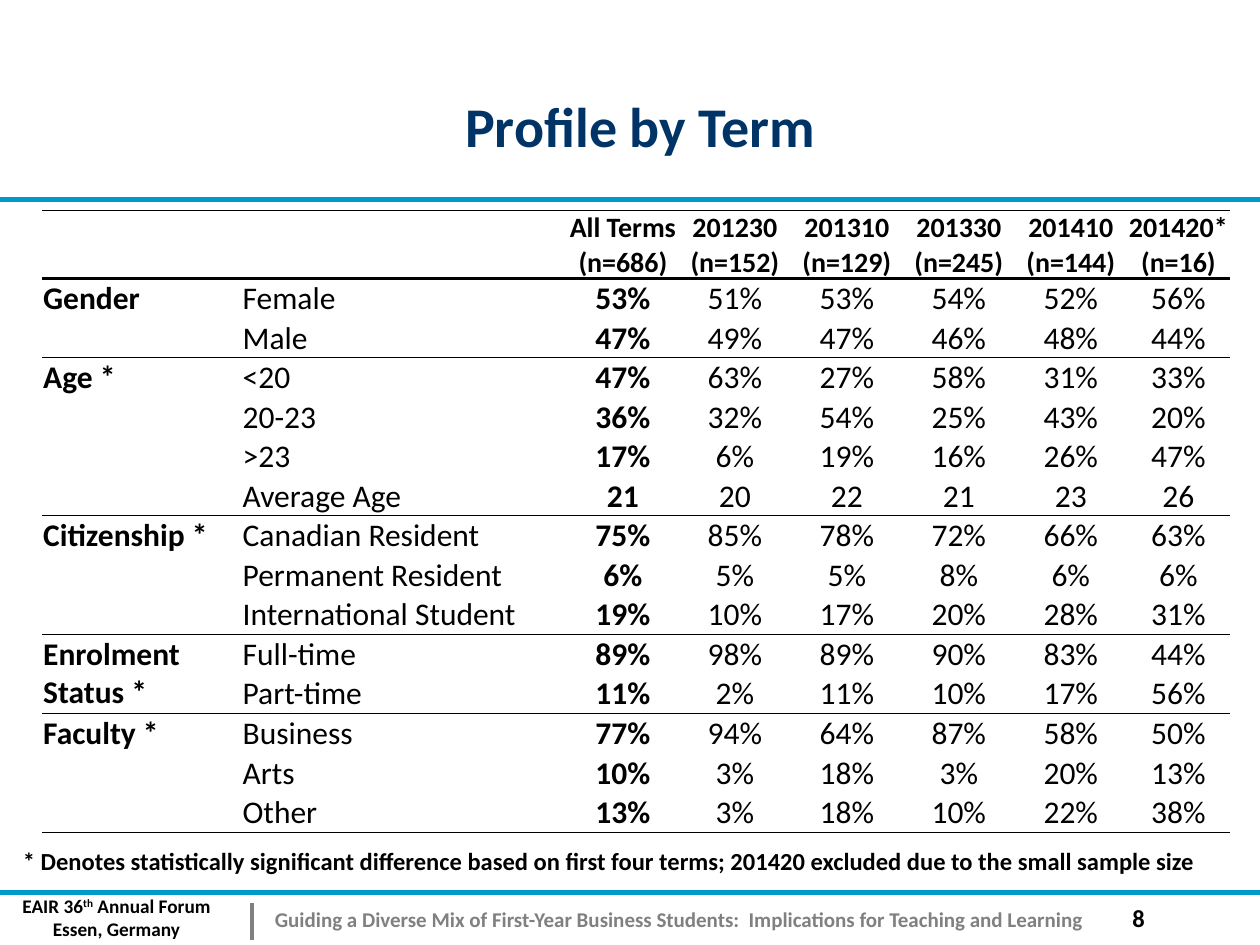
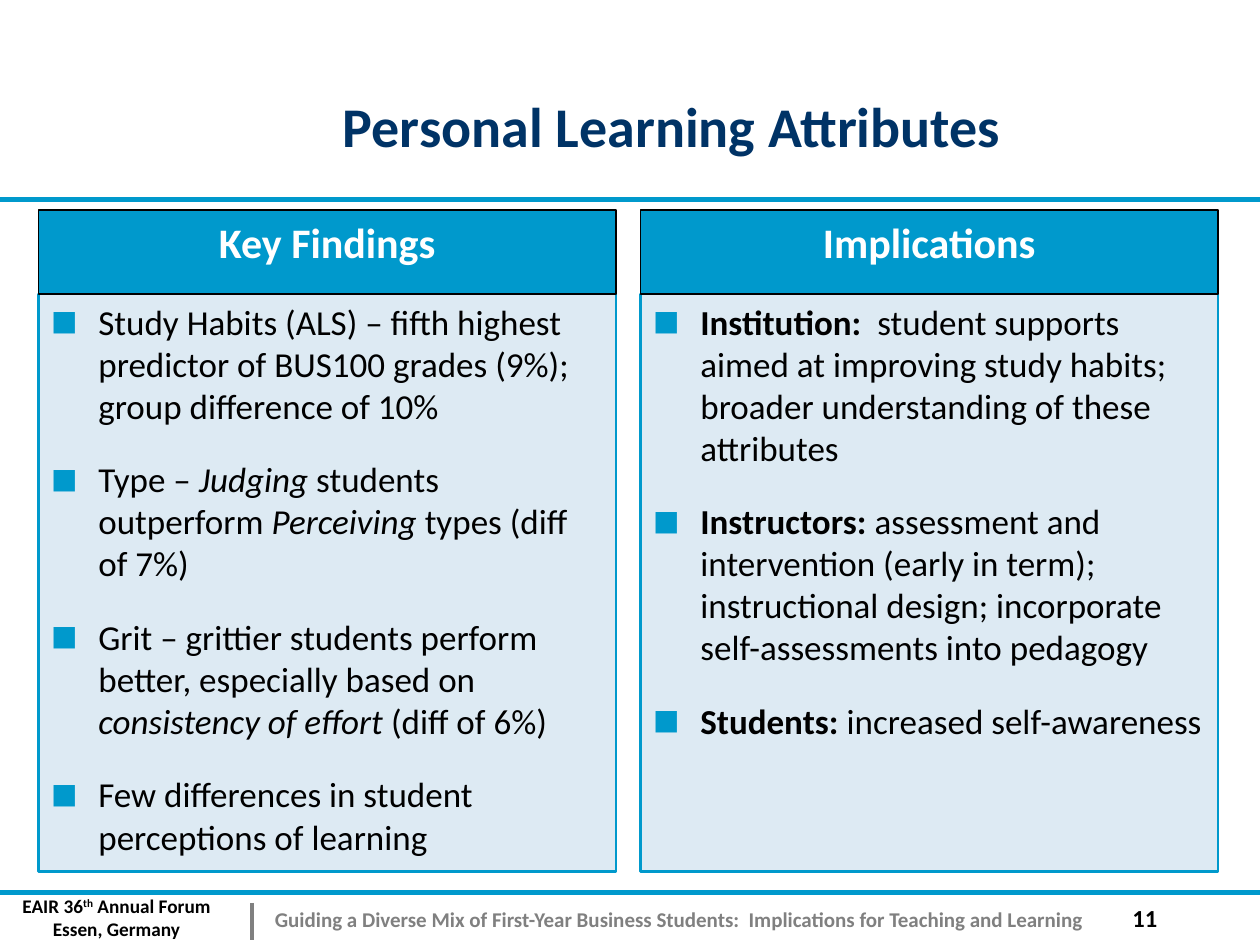
"""Build two slides on first-year business students: a profile table and findings with implications."""
from lxml import etree
from pptx import Presentation
from pptx.dml.color import RGBColor
from pptx.enum.shapes import MSO_CONNECTOR, MSO_SHAPE
from pptx.enum.text import MSO_ANCHOR, MSO_AUTO_SIZE, PP_ALIGN
from pptx.oxml.ns import qn
from pptx.util import Pt

CENTER = PP_ALIGN.CENTER
LEFT = PP_ALIGN.LEFT
TOP = MSO_ANCHOR.TOP
BOTTOM = MSO_ANCHOR.BOTTOM
NO_AUTOFIT = MSO_AUTO_SIZE.NONE
STRAIGHT = MSO_CONNECTOR.STRAIGHT
PROCESS = MSO_SHAPE.FLOWCHART_PROCESS

FONT = "Calibri"
BLACK = "000000"
WHITE = "FFFFFF"
NAVY = "003366"
BLUE = "0099CC"
PALE_BLUE = "DDEAF3"
GRAY = "808080"

SLIDE_WIDTH = 720
SLIDE_HEIGHT = 540
TITLE_ONLY = 5
TWO_CONTENT = 3

PROFILE_HEADINGS = [
    ("All Terms", "(n=686)"), ("201230", "(n=152)"), ("201310", "(n=129)"),
    ("201330", "(n=245)"), ("201410", "(n=144)"), ("201420*", "(n=16)"),
]
PROFILE_GROUPS = [
    ("Gender", [
        ("Female", "53%", "51%", "53%", "54%", "52%", "56%"),
        ("Male", "47%", "49%", "47%", "46%", "48%", "44%"),
    ]),
    ("Age *", [
        ("<20", "47%", "63%", "27%", "58%", "31%", "33%"),
        ("20-23", "36%", "32%", "54%", "25%", "43%", "20%"),
        (">23", "17%", "6%", "19%", "16%", "26%", "47%"),
        ("Average Age", "21", "20", "22", "21", "23", "26"),
    ]),
    ("Citizenship *", [
        ("Canadian Resident", "75%", "85%", "78%", "72%", "66%", "63%"),
        ("Permanent Resident", "6%", "5%", "5%", "8%", "6%", "6%"),
        ("International Student", "19%", "10%", "17%", "20%", "28%", "31%"),
    ]),
    ("Enrolment Status *", [
        ("Full-time", "89%", "98%", "89%", "90%", "83%", "44%"),
        ("Part-time", "11%", "2%", "11%", "10%", "17%", "56%"),
    ]),
    ("Faculty *", [
        ("Business", "77%", "94%", "64%", "87%", "58%", "50%"),
        ("Arts", "10%", "3%", "18%", "3%", "20%", "13%"),
        ("Other", "13%", "3%", "18%", "10%", "22%", "38%"),
    ]),
]
COLUMN_WIDTHS = [114, 186] + [64] * 5 + [59]
HEADING_HEIGHT = 39
ROW_HEIGHT = 22.6
THIN_RULE = 0.5
THICK_RULE = 2

KEY_FINDINGS = [
    [("Study Habits (ALS) – fifth highest predictor of BUS100 grades (9%); "
      "group difference of 10%", {})],
    [("Type – ", {}), ("Judging", {"italic": True}), (" students outperform ", {}),
     ("Perceiving ", {"italic": True}), ("types (diff of 7%)", {})],
    [("Grit – grittier students perform better, especially based on ", {}),
     ("consistency of effort ", {"italic": True}), ("(diff of 6%)", {})],
    [("Few differences in student perceptions of learning", {})],
]
IMPLICATIONS = [
    [("Institution:  ", {"bold": True}),
     ("student supports aimed at improving study habits; "
      "broader understanding of these attributes", {})],
    [("Instructors: ", {"bold": True}),
     ("assessment and intervention (early in term); instructional design; "
      "incorporate self-assessments into pedagogy", {})],
    [("Students: ", {"bold": True}), ("increased self-awareness", {})],
]


def color(value):
    """Return the colour for a hex string."""
    return RGBColor.from_string(value)


def add_run(paragraph, text, size, hex_color=BLACK, bold=False, italic=False, baseline=0):
    """Append one formatted run to a paragraph."""
    run = paragraph.add_run()
    run.text = text
    font = run.font
    font.name, font.size = FONT, Pt(size)
    font.bold, font.italic = bold, italic
    font.color.rgb = color(hex_color)
    if baseline:
        run._r.get_or_add_rPr().set("baseline", str(baseline * 1000))


def place(shape, left, top, width, height):
    """Move and size a shape in points."""
    shape.left, shape.top = Pt(left), Pt(top)
    shape.width, shape.height = Pt(width), Pt(height)


def paint(shape, fill, line, line_width):
    """Give a shape its solid fill and outline."""
    shape.fill.solid()
    shape.fill.fore_color.rgb = color(fill)
    shape.line.color.rgb = color(line)
    shape.line.width = Pt(line_width)


def add_rule(slide, start, end, hex_color, width):
    """Draw a straight line without shadow between two points."""
    rule = slide.shapes.add_connector(STRAIGHT, *map(Pt, start + end))
    rule.line.color.rgb = color(hex_color)
    rule.line.width = Pt(width)
    etree.SubElement(rule._element.spPr, qn("a:effectLst"))


def add_text_box(slide, left, top, width, height):
    """Add a wrapping text box and return its text frame."""
    box = slide.shapes.add_textbox(Pt(left), Pt(top), Pt(width), Pt(height))
    box.text_frame.word_wrap = True
    return box.text_frame


def add_footer(slide, number):
    """Add the blue bands, the event, the talk title and the page number."""
    for y in (114, 510):
        add_rule(slide, (0, y), (SLIDE_WIDTH, y), BLUE, 3.25)
    add_rule(slide, (144, 516), (144, 537), GRAY, 2.75)

    event = add_text_box(slide, 3.6, 507.5, 126, 34)
    first = event.paragraphs[0]
    add_run(first, "EAIR 36", 11, bold=True)
    add_run(first, "th", 11, bold=True, baseline=30)
    add_run(first, " Annual Forum", 11, bold=True)
    add_run(event.add_paragraph(), "Essen, Germany", 11, bold=True)
    for paragraph in event.paragraphs:
        paragraph.alignment = CENTER

    talk = add_text_box(slide, 150, 512.5, 555, 24.5).paragraphs[0]
    tabs = etree.SubElement(talk._p.get_or_add_pPr(), qn("a:tabLst"))
    etree.SubElement(tabs, qn("a:tab"), pos=str(Pt(490)), algn="l")
    add_run(talk, "Guiding a Diverse Mix of First-Year Business Students:  "
                  "Implications for Teaching and Learning", 12, GRAY, bold=True)
    add_run(talk, "\t", 12, GRAY, bold=True)
    add_run(talk, str(number), 14, bold=True)


def add_slide(presentation, layout, title, title_left, number):
    """Add a slide with its title and footer."""
    slide = presentation.slides.add_slide(presentation.slide_layouts[layout])
    shape = slide.shapes.title
    place(shape, title_left, 48, 612, 46.5)
    frame = shape.text_frame
    frame.auto_size, frame.vertical_anchor = NO_AUTOFIT, BOTTOM
    frame.paragraphs[0].alignment = CENTER
    add_run(frame.paragraphs[0], title, 32, NAVY, bold=True)
    add_footer(slide, number)
    return slide


def set_borders(cell, top, bottom):
    """Rule a cell above and below, leaving its sides open."""
    properties = cell._tc.get_or_add_tcPr()
    widths = {"a:lnL": None, "a:lnR": None, "a:lnT": top, "a:lnB": bottom}
    for index, (tag, width) in enumerate(widths.items()):
        line = etree.Element(qn(tag))
        if width:
            line.set("w", str(Pt(width)))
            fill = etree.SubElement(line, qn("a:solidFill"))
            etree.SubElement(fill, qn("a:srgbClr"), val=BLACK)
        else:
            etree.SubElement(line, qn("a:noFill"))
        properties.insert(index, line)


def fill_cell(cell, lines, size, bold, alignment):
    """Write the lines of one table cell."""
    paragraph = cell.text_frame.paragraphs[0]
    paragraph.alignment = alignment
    for index, line in enumerate(lines):
        if index:
            paragraph.add_line_break()
        add_run(paragraph, line, size, bold=bold)


def add_profile_table(slide):
    """Add the table of student profiles by term."""
    row_count = 1 + sum(len(rows) for _, rows in PROFILE_GROUPS)
    height = HEADING_HEIGHT + ROW_HEIGHT * (row_count - 1)
    table = slide.shapes.add_table(row_count, len(COLUMN_WIDTHS), Pt(24), Pt(120),
                                   Pt(sum(COLUMN_WIDTHS)), Pt(height)).table
    table.first_row = table.horz_banding = False
    for column, width in zip(table.columns, COLUMN_WIDTHS):
        column.width = Pt(width)
    for index, row in enumerate(table.rows):
        row.height = Pt(ROW_HEIGHT if index else HEADING_HEIGHT)

    for column, heading in enumerate(PROFILE_HEADINGS, start=2):
        fill_cell(table.cell(0, column), heading, 16, True, CENTER)
    rules = {0: THIN_RULE, 1: THICK_RULE}
    spans = {}
    start = 1
    for group, rows in PROFILE_GROUPS:
        fill_cell(table.cell(start, 0), [group], 18, True, LEFT)
        spans[start] = len(rows)
        for row, values in enumerate(rows, start):
            for column, value in enumerate(values, start=1):
                fill_cell(table.cell(row, column), [value], 18, column == 2,
                          LEFT if column == 1 else CENTER)
        start += len(rows)
        rules[start] = THIN_RULE

    for row in range(row_count):
        for column in range(len(COLUMN_WIDTHS)):
            cell = table.cell(row, column)
            cell.margin_left = cell.margin_right = cell.margin_top = Pt(0.7)
            cell.margin_bottom = 0
            cell.fill.background()
            span = spans.get(row, 1) if column == 0 else 1
            set_borders(cell, rules.get(row), rules.get(row + span))
    for row, span in spans.items():
        table.cell(row, 0).merge(table.cell(row + span - 1, 0))


def add_bullet(paragraph):
    """Give a paragraph a hanging blue square bullet."""
    properties = paragraph._p.get_or_add_pPr()
    properties.set("marL", str(Pt(27)))
    properties.set("indent", str(-Pt(27)))
    bullet_color = etree.SubElement(properties, qn("a:buClr"))
    etree.SubElement(bullet_color, qn("a:srgbClr"), val=BLUE)
    etree.SubElement(properties, qn("a:buSzPct"), val="80000")
    etree.SubElement(properties, qn("a:buFont"), typeface=FONT)
    etree.SubElement(properties, qn("a:buChar"), char="■")


def add_panel(slide, body, left, heading, items):
    """Fill a body placeholder with bullets and put a heading bar above it."""
    place(body, left, 168, 330, 330)
    paint(body, PALE_BLUE, BLUE, 1.5)
    frame = body.text_frame
    frame.auto_size = NO_AUTOFIT
    for index, runs in enumerate(items):
        paragraph = frame.add_paragraph() if index else frame.paragraphs[0]
        add_bullet(paragraph)
        paragraph.space_before = Pt(18 if index else 0)
        for text, style in runs:
            add_run(paragraph, text, 20, **style)

    bar = slide.shapes.add_shape(PROCESS, Pt(left), Pt(120), Pt(330), Pt(48))
    bar.shadow.inherit = False
    paint(bar, BLUE, BLACK, 0.75)
    bar.text_frame.vertical_anchor = TOP
    paragraph = bar.text_frame.paragraphs[0]
    paragraph.alignment = CENTER
    add_run(paragraph, heading, 24, WHITE, bold=True)


def main():
    """Build and save the presentation."""
    presentation = Presentation()
    presentation.slide_width = Pt(SLIDE_WIDTH)
    presentation.slide_height = Pt(SLIDE_HEIGHT)

    profile = add_slide(presentation, TITLE_ONLY, "Profile by Term", 60, 8)
    add_profile_table(profile)
    note = add_text_box(profile, 6, 480, 702, 24.5).paragraphs[0]
    add_run(note, "* Denotes statistically significant difference based on first four terms; "
                  "201420 excluded due to the small sample size", 14, bold=True)

    attributes = add_slide(presentation, TWO_CONTENT, "Personal Learning Attributes", 78, 11)
    add_panel(attributes, attributes.placeholders[1], 22, "Key Findings", KEY_FINDINGS)
    add_panel(attributes, attributes.placeholders[2], 366, "Implications", IMPLICATIONS)

    presentation.save("out.pptx")


if __name__ == "__main__":
    main()
